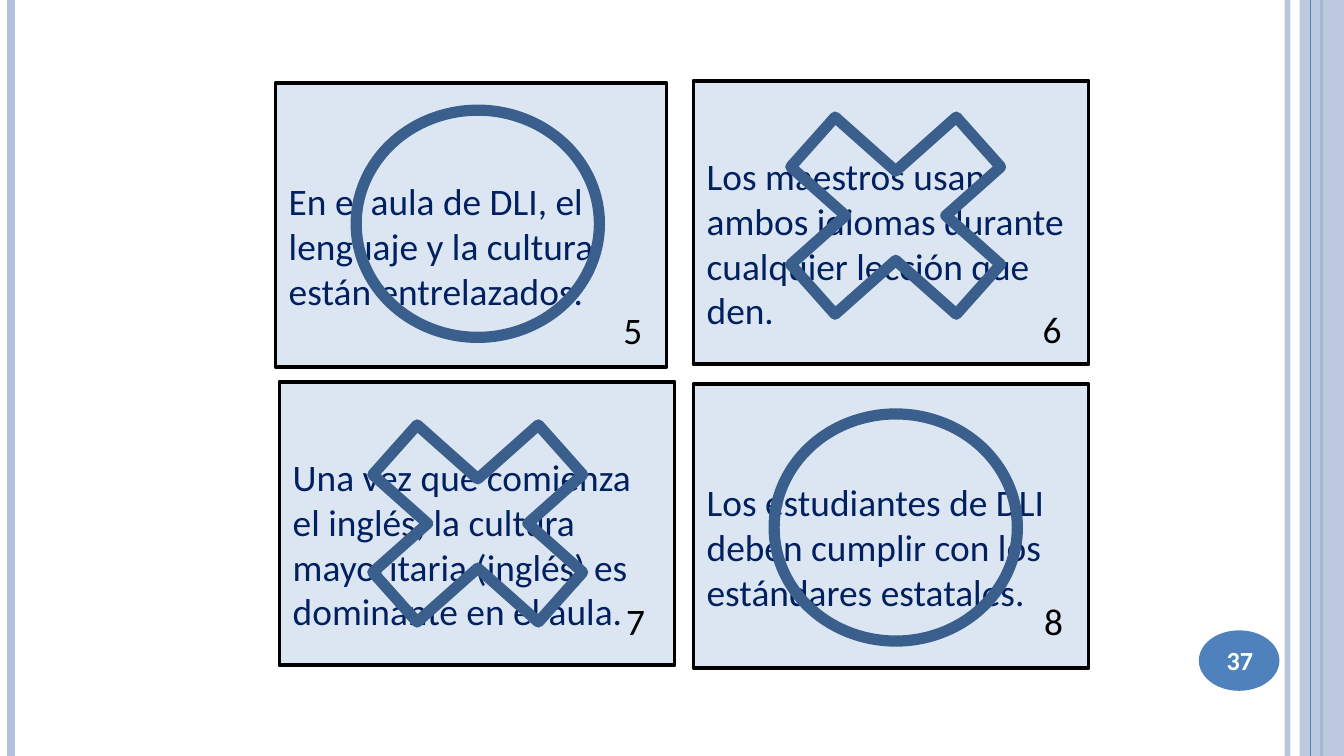
from lxml.etree import SubElement
from pptx import Presentation
from pptx.dml.color import RGBColor
from pptx.enum.shapes import MSO_CONNECTOR, MSO_SHAPE
from pptx.enum.text import MSO_ANCHOR, PP_ALIGN
from pptx.oxml.ns import qn
from pptx.util import Inches, Pt

WIDTH = 10
HEIGHT = WIDTH * 9 / 16
PALE, BLUE, MARK, CARD = "B3C1DB", "4F81BD", "3A5F8C", "DCE6F2"
NAVY, BLACK, WHITE = "002060", "000000", "FFFFFF"
CIRCLE, CROSS = MSO_SHAPE.OVAL, MSO_SHAPE.MATH_MULTIPLY


def color(value):
    return RGBColor.from_string(value)


def set_opacity(element, percent):
    for tint in element.spPr.iter(qn("a:srgbClr")):
        SubElement(tint, qn("a:alpha"), val=str(percent * 1000))


def add_stripe(slide, x, tint, width, opacity=100):
    stripe = slide.shapes.add_connector(
        MSO_CONNECTOR.STRAIGHT, Inches(x), 0, Inches(x), Inches(HEIGHT))
    stripe.line.color.rgb = color(tint)
    stripe.line.width = Pt(width)
    SubElement(stripe._element.spPr, qn("a:effectLst"))
    if opacity < 100:
        set_opacity(stripe._element, opacity)


def add_figure(slide, kind, box, fill=None, outline=None, weight=0):
    figure = slide.shapes.add_shape(kind, *map(Inches, box))
    figure.shadow.inherit = False
    if fill:
        figure.fill.solid()
        figure.fill.fore_color.rgb = color(fill)
    else:
        figure.fill.background()
    if outline:
        figure.line.color.rgb = color(outline)
        figure.line.width = Pt(weight)
    else:
        figure.line.fill.background()
    return figure


def write(frame, words, size, tint, align=PP_ALIGN.LEFT, bold=False, **layout):
    for name, value in {"word_wrap": True, **layout}.items():
        setattr(frame, name, value)
    paragraph = frame.paragraphs[0]
    paragraph.alignment = align
    run = paragraph.add_run()
    run.text = words
    for name, value in {"name": "Calibri", "size": Pt(size), "bold": bold}.items():
        setattr(run.font, name, value)
    run.font.color.rgb = color(tint)


def add_label(slide, box, words, size, tint, **layout):
    label = slide.shapes.add_textbox(*map(Inches, box))
    write(label.text_frame, words, size, tint, **layout)


def add_card(slide, box, statement, number, number_at):
    card = add_figure(slide, MSO_SHAPE.RECTANGLE, box, CARD, BLACK, 2)
    write(card.text_frame, statement, 20, NAVY,
          vertical_anchor=MSO_ANCHOR.MIDDLE, margin_top=Inches(0.35))
    add_label(slide, (*number_at, 0.4, 0.44), number, 20, BLACK)


def add_mark(slide, kind, left, top):
    size = (1.81, 1.69) if kind == CIRCLE else (2.37, 2.11)
    add_figure(slide, kind, (left, top, *size), outline=MARK, weight=6)


def add_border(slide):
    add_stripe(slide, 9.58, PALE, 3, 93)
    add_stripe(slide, 0.08, PALE, 4.5)
    add_stripe(slide, 9.83, BLUE, 1.5)
    band = add_figure(slide, MSO_SHAPE.RECTANGLE, (9.67, 0, 0.33, HEIGHT), PALE)
    set_opacity(band._element, 87)
    add_stripe(slide, 9.75, BLUE, 0.75)


def add_page_number(slide):
    add_figure(slide, MSO_SHAPE.OVAL, (8.92, 4.69, 0.6, 0.45), BLUE)
    add_label(slide, (8.89, 4.7, 0.67, 0.43), "37", 14, WHITE, bold=True,
              align=PP_ALIGN.CENTER, vertical_anchor=MSO_ANCHOR.MIDDLE)


def main():
    deck = Presentation()
    deck.slide_width, deck.slide_height = Inches(WIDTH), Inches(HEIGHT)
    slide = deck.slides.add_slide(deck.slide_layouts[6])
    add_border(slide)

    cards = [
        ((5.16, 0.6, 2.94, 2.11), "6", (7.66, 2.23), CROSS, (5.48, 0.55),
         "Los maestros usan ambos idiomas durante cualquier lección que den."),
        ((2.08, 2.84, 2.94, 2.11), "7", (4.56, 4.4), CROSS, (2.37, 2.84),
         "Una vez que comienza el inglés, la cultura mayoritaria (inglés) "
         "es dominante en el aula."),
        ((2.05, 0.62, 2.91, 2.11), "5", (4.54, 2.24), CIRCLE, (2.65, 0.82),
         "En el aula de DLI, el lenguaje y la cultura están entrelazados."),
        ((5.16, 2.86, 2.94, 2.11), "8", (7.67, 4.4), CIRCLE, (5.76, 3.08),
         "Los estudiantes de DLI deben cumplir con los estándares estatales."),
    ]
    for box, number, number_at, mark, mark_at, statement in cards:
        add_card(slide, box, statement, number, number_at)
        add_mark(slide, mark, *mark_at)

    add_page_number(slide)
    deck.save("out.pptx")


if __name__ == "__main__":
    main()
